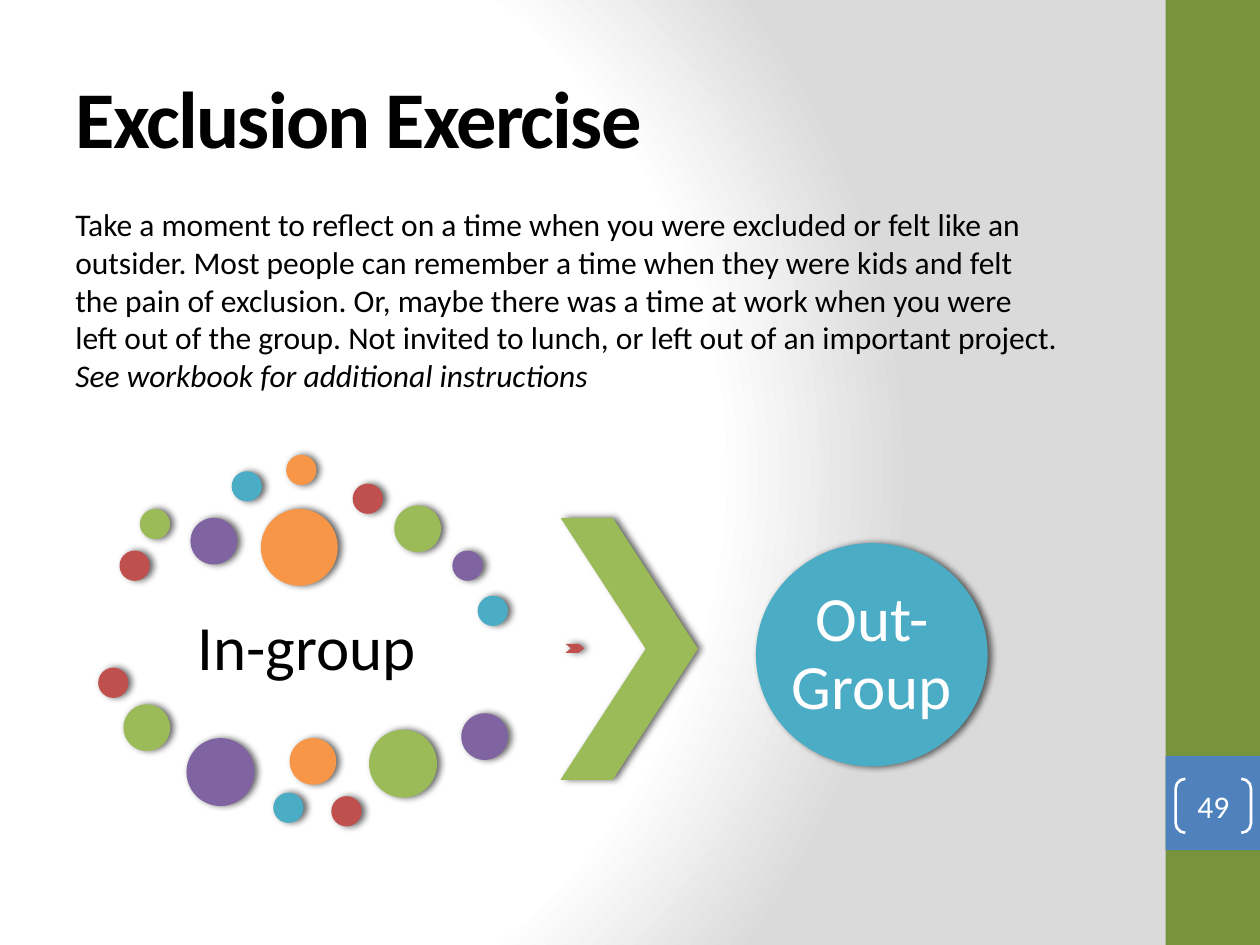
from itertools import cycle

from lxml import etree
from pptx import Presentation
from pptx.dml.color import RGBColor
from pptx.enum.shapes import MSO_SHAPE as Preset
from pptx.enum.text import MSO_ANCHOR as Anchor, MSO_AUTO_SIZE as AutoSize, PP_ALIGN as Align
from pptx.oxml import parse_xml
from pptx.oxml.ns import nsdecls, qn
from pptx.util import Cm, Pt

THEME = {
    "font": "Calibri",
    "black": "000000", "white": "FFFFFF", "grey": "DADADA",
    "band": "77933C", "blue": "4F81BD",
    "red": "C0504D", "green": "9BBB59", "purple": "8064A2",
    "teal": "4BACC6", "orange": "F79646",
    "title": Pt(46), "label": Pt(36), "body": Pt(18),
}


def draw(shapes, preset, box, fill=None, shadowed=False):
    """Add a preset shape without outline; box is left, top, width, height in cm."""
    shape = shapes.add_shape(preset, *map(Cm, box))
    shape.line.fill.background()
    if fill:
        shape.fill.solid()
        shape.fill.fore_color.rgb = RGBColor.from_string(THEME[fill])
    else:
        shape.fill.background()
    shape.shadow.inherit = False
    if shadowed:
        effects = shape.element.spPr.find(qn("a:effectLst"))
        effects.append(parse_xml(
            f'<a:outerShdw {nsdecls("a")} blurRad="50800" dist="25400" dir="0" rotWithShape="0">'
            f'<a:srgbClr val="{THEME["black"]}"><a:alpha val="60000"/></a:srgbClr></a:outerShdw>'))
    return shape


def write(shape, runs, size, color, align, anchor, inset=None, spacing=None):
    """Fill a shape with one paragraph; runs are (text, font settings) pairs."""
    frame = shape.text_frame
    settings = {"word_wrap": True, "auto_size": AutoSize.NONE, "vertical_anchor": anchor}
    if inset is not None:
        settings |= {f"margin_{side}": Cm(inset) for side in ("left", "top", "right", "bottom")}
    for name, value in settings.items():
        setattr(frame, name, value)
    paragraph = frame.paragraphs[0]
    paragraph.alignment = align
    if spacing:
        paragraph.line_spacing = spacing
    for text, extra in runs:
        run = paragraph.add_run()
        run.text = text
        for name, value in {"name": THEME["font"], "size": THEME[size], **extra}.items():
            setattr(run.font, name, value)
        run.font.color.rgb = RGBColor.from_string(THEME[color])
    return paragraph


deck = Presentation()
deck.slide_width, deck.slide_height = Cm(25.4), Cm(19.05)
slide = deck.slides.add_slide(deck.slide_layouts[5])

# Background: radial gradient from white to grey
slide.background.fill.gradient()
gradient = next(slide.element.iter(qn("a:gradFill")))
for child in list(gradient):
    gradient.remove(child)
stops = etree.SubElement(gradient, qn("a:gsLst"))
for position, color in ((0, "white"), (75, "white"), (100, "grey")):
    stop = etree.SubElement(stops, qn("a:gs"), pos=str(position * 1000))
    etree.SubElement(stop, qn("a:srgbClr"), val=THEME[color])
radial = etree.SubElement(gradient, qn("a:path"), {"path": "circle"})
etree.SubElement(radial, qn("a:fillToRect"), l="20000", t="50000", r="100000", b="50000")

# Side band and page number
draw(slide.shapes, Preset.RECTANGLE, (23.5, 0, 1.9, 19.05), "band")
draw(slide.shapes, Preset.RECTANGLE, (23.5, 15.24, 1.9, 1.9), "blue")
page_number = draw(slide.shapes, Preset.DOUBLE_BRACKET, (23.7, 15.7, 1.52, 1.09))
page_number.adjustments[0] = 0.18
page_number.line.color.rgb = RGBColor.from_string(THEME["white"])
page_number.line.width = Pt(1.5)
write(page_number, [("49", {})], "body", "white", Align.CENTER, Anchor.MIDDLE, inset=0)

# Title
title = slide.shapes.title
title.left, title.top, title.width, title.height = map(Cm, (1.27, 0.76, 21.16, 3.18))
heading = write(title, [("Exclusion Exercise", {"bold": True})],
                "title", "black", Align.LEFT, Anchor.MIDDLE)
heading.runs[0].font._element.set("spc", "-100")

# Diagram: in-group dots, arrow, out-group circle
diagram = slide.shapes.add_group_shape().shapes
in_group = diagram.add_textbox(*map(Cm, (2.41, 11.86, 7.54, 2.49)))
write(in_group, [("In-group", {})], "label", "black", Align.CENTER, Anchor.MIDDLE, 0.13, 0.9)

SMALL, MEDIUM, LARGE, LARGEST = 0.61, 0.94, 1.37, 1.55
dots = [
    (2.41, 11.1, SMALL), (2.82, 10.26, SMALL), (3.84, 10.44, MEDIUM),
    (4.67, 9.5, SMALL), (5.77, 9.17, SMALL), (7.11, 9.75, SMALL),
    (7.95, 10.19, MEDIUM), (9.12, 11.1, SMALL), (9.63, 12.01, SMALL),
    (5.26, 10.26, LARGEST), (1.98, 13.46, SMALL), (2.49, 14.2, MEDIUM),
    (3.76, 14.88, LARGE), (5.51, 15.98, SMALL), (5.84, 14.88, MEDIUM),
    (6.68, 16.05, SMALL), (7.44, 14.71, LARGE), (9.3, 14.38, MEDIUM),
]
for (left, top, size), color in zip(dots, cycle(("red", "green", "purple", "teal", "orange"))):
    draw(diagram, Preset.OVAL, (left, top, size, size), color, shadowed=True)

for box, color in (((11.4, 12.98, 0.38, 0.18), "red"), ((11.3, 10.44, 2.77, 5.28), "green")):
    arrow = draw(diagram, Preset.CHEVRON, box, color, shadowed=True)
    arrow.adjustments[0] = 0.62

draw(diagram, Preset.OVAL, (15.24, 10.95, 4.67, 4.5), "teal", shadowed=True)
out_group = diagram.add_textbox(*map(Cm, (15.93, 11.61, 3.3, 3.18)))
write(out_group, [("Out-Group", {})], "label", "white", Align.CENTER, Anchor.MIDDLE, 0, 0.9)

# Instructions
instructions = slide.shapes.add_textbox(*map(Cm, (1.27, 4.01, 20.32, 4.88)))
write(instructions, [
    ("Take a moment to reflect on a time when you were excluded or felt like an outsider. "
     "Most people can remember a time when they were kids and felt the pain of exclusion. "
     "Or, maybe there was a time at work when you were left out of the group. "
     "Not invited to lunch, or left out of an important project. ", {}),
    ("See workbook for additional instructions", {"italic": True}),
], "body", "black", Align.LEFT, Anchor.TOP)

deck.save("out.pptx")
